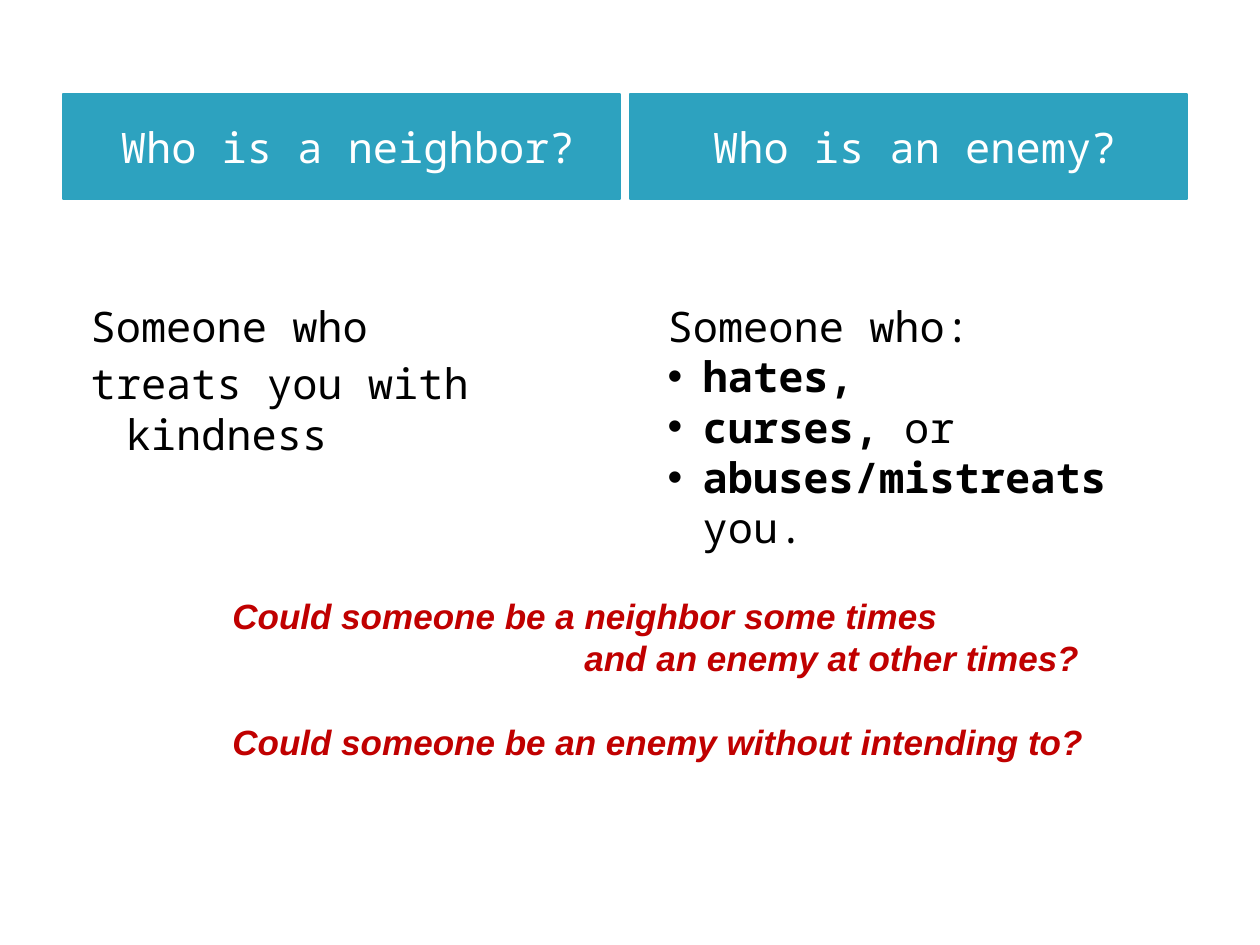
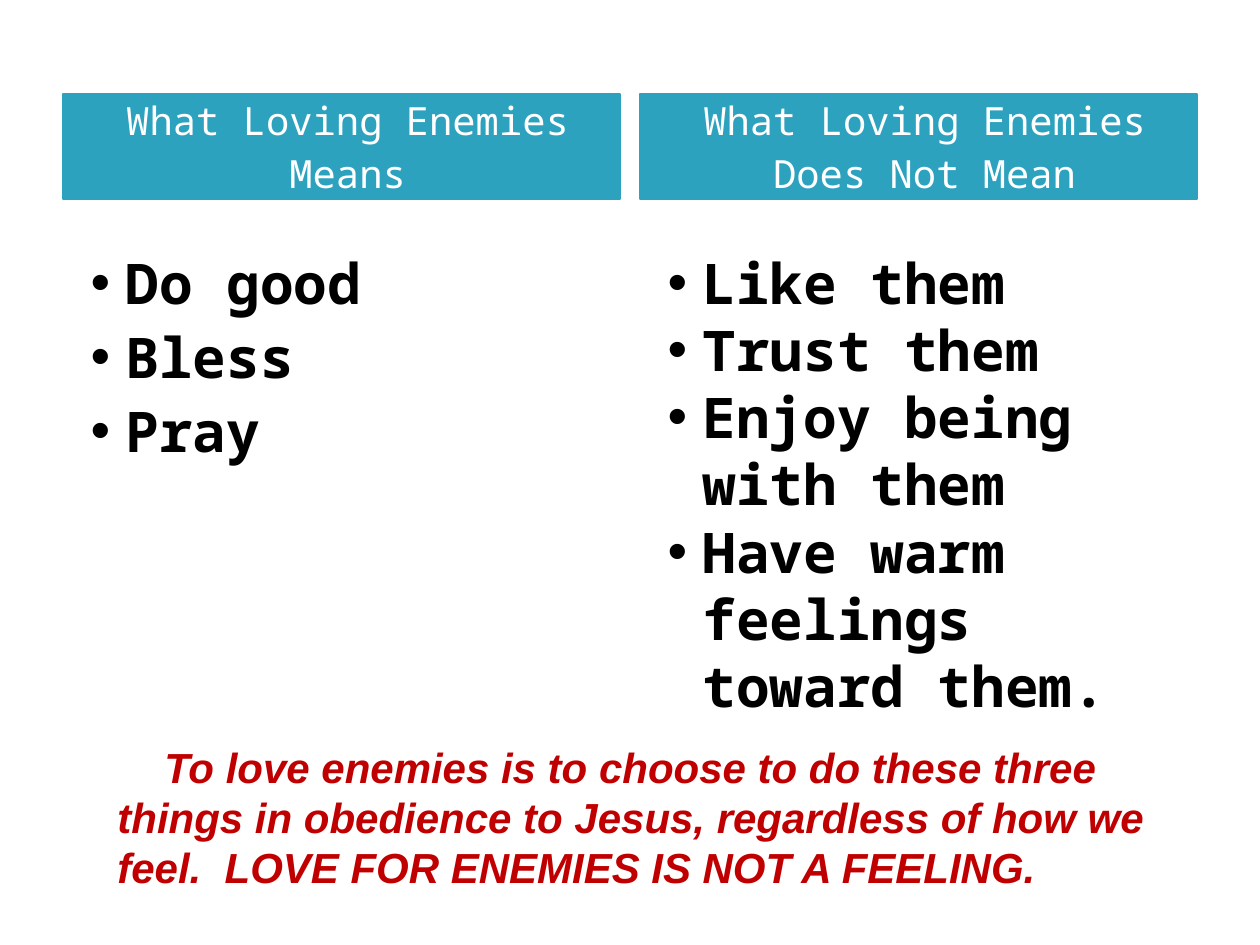
"""Build two slides that compare neighbors and enemies."""
from lxml import etree
from pptx import Presentation
from pptx.dml.color import RGBColor
from pptx.enum.text import MSO_ANCHOR, MSO_AUTO_SIZE, PP_ALIGN
from pptx.oxml.ns import qn
from pptx.util import Emu, Pt

TEAL = RGBColor(0x2D, 0xA2, 0xBF)
WHITE = RGBColor(0xFF, 0xFF, 0xFF)
BLACK = RGBColor(0, 0, 0)
RED = RGBColor(0xC0, 0, 0)
MIDDLE = MSO_ANCHOR.MIDDLE
FIXED = MSO_AUTO_SIZE.NONE
CENTER = PP_ALIGN.CENTER
MONO, SANS = "Noto Sans Mono", "Arial"
SCALE = 914400 / 126
LEFT, RIGHT, WIDE = 63, 640, 557
BAND_TOP, BAND_HIGH = 94, 105
HANG = 35
COMPARE = 4


def px(count):
    return Emu(round(count * SCALE))


class Deck:
    """Hold the shared style and the current slide."""

    def __init__(self):
        self.show = Presentation()
        self.show.slide_width = px(1260)
        self.show.slide_height = px(945)
        self.slide = None

    def page(self):
        layout = self.show.slide_layouts[COMPARE]
        self.slide = self.show.slides.add_slide(layout)
        title = self.slide.shapes.title.element
        title.getparent().remove(title)

    def place(self, index, left, top, high):
        shape = self.slide.placeholders[index]
        shape.left, shape.top = px(left), px(top)
        shape.width, shape.height = px(WIDE), px(high)
        shape.text_frame.auto_size = FIXED
        return shape

    def line(self, frame, order, gap=0):
        para = frame.add_paragraph() if order else frame.paragraphs[0]
        para.space_before = Pt(gap if order else 0)
        return para

    def indent(self, para, margin, first):
        props = para._p.get_or_add_pPr()
        props.set("marL", str(px(margin)))
        props.set("indent", str(px(first)))
        return props

    def bullet(self, props, mark):
        if mark:
            etree.SubElement(props, qn("a:buFont")).set("typeface", SANS)
            etree.SubElement(props, qn("a:buChar")).set("char", "•")
        else:
            etree.SubElement(props, qn("a:buNone"))

    def run(self, para, text, size, color, face=MONO, bold=False, slant=False):
        run = para.add_run()
        run.text = text
        font = run.font
        font.name, font.size = face, Pt(size)
        font.bold, font.italic = bold, slant
        font.color.rgb = color

    def band(self, index, left, lines, size):
        shape = self.place(index, left, BAND_TOP, BAND_HIGH)
        shape.fill.solid()
        shape.fill.fore_color.rgb = TEAL
        shape.line.color.rgb = TEAL
        shape.line.width = Pt(0.75)
        frame = shape.text_frame
        frame.vertical_anchor = MIDDLE
        frame.margin_left = px(25)
        for order, text in enumerate(lines):
            para = self.line(frame, order, 4)
            para.alignment = CENTER
            self.run(para, text, size, WHITE)

    def points(self, index, left, top, high, rows, size, gap=0):
        frame = self.place(index, left, top, high).text_frame
        for order, (mark, strong, plain) in enumerate(rows):
            para = self.line(frame, order, gap)
            self.bullet(self.indent(para, 50, -HANG), mark)
            if strong:
                self.run(para, strong, size, BLACK, bold=True)
            if plain:
                self.run(para, plain, size, BLACK)

    def note(self, left, top, wide, high, rows, size):
        box = self.slide.shapes.add_textbox(px(left), px(top), px(wide), px(high))
        frame = box.text_frame
        frame.word_wrap = True
        for order, (text, margin, first, gap) in enumerate(rows):
            para = self.line(frame, order, gap)
            self.indent(para, margin, first)
            self.run(para, text, size, RED, SANS, True, True)


def main():
    deck = Deck()

    deck.page()
    deck.band(1, LEFT, ["Who is a neighbor?"], 24)
    deck.band(3, 630, ["Who is an enemy?"], 24)
    deck.points(2, LEFT, 294, 449, [
        (False, "", "Someone who"),
        (False, "", "treats you with kindness"),
    ], 24, 4)
    deck.points(4, RIGHT, 294, 437, [
        (False, "", "Someone who:"),
        (True, "hates,", ""),
        (True, "curses, ", "or"),
        (True, "abuses/mistreats ", "you."),
    ], 24)
    deck.note(220, 588, 884, 183, [
        ("Could someone be a neighbor some times", 0, 0, 0),
        ("and an enemy at other times?", 352, 0, 0),
        ("Could someone be an enemy without intending to?", 0, 0, 24),
    ], 20)

    deck.page()
    deck.band(1, LEFT, ["What Loving Enemies", "Means"], 22.2)
    deck.band(3, RIGHT, ["What Loving Enemies", "Does Not Mean"], 22.2)
    means = ["Do good", "Bless", "Pray"]
    nots = ["Like them", "Trust them", "Enjoy being with them",
            "Have warm feelings toward them."]
    for index, left, words, gap in ((2, LEFT, means, 4), (4, RIGHT, nots, 0)):
        rows = [(True, word, "") for word in words]
        deck.points(index, left, 242, 500, rows, 32, gap)
    deck.note(105, 735, 1092, 165, [
        ("To love enemies is to choose to do these three things in obedience "
         "to Jesus, regardless of how we feel.  LOVE FOR ENEMIES IS NOT A "
         "FEELING.", 0, 47, 0),
    ], 24)

    deck.show.save("out.pptx")


if __name__ == "__main__":
    main()
